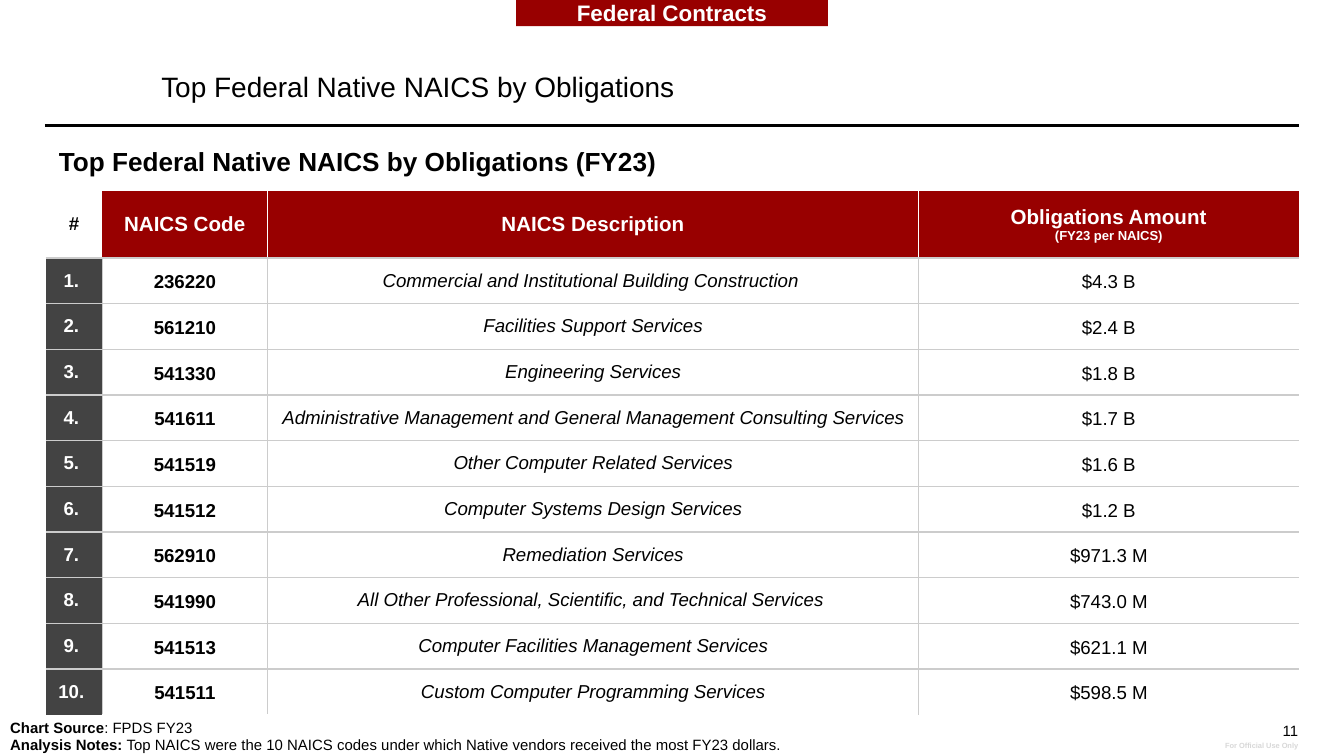
from dataclasses import dataclass, field
from lxml.etree import SubElement
from pptx import Presentation
from pptx.dml.color import RGBColor
from pptx.enum.shapes import MSO_CONNECTOR as Connector, MSO_SHAPE as Preset
from pptx.enum.text import MSO_ANCHOR as Anchor, MSO_AUTO_SIZE as AutoSize, PP_ALIGN as Align
from pptx.oxml.ns import qn
from pptx.util import Emu, Pt

EMU_PER_PX = 4572
FONT = "Arial"
RED, DARK, BLACK, WHITE, RULE, PALE = "980000", "434343", "000000", "FFFFFF", "CCCCCC", "D8D8D8"
PLAIN_TABLE_STYLE = "{2D5ABB26-0587-4C30-8999-92F81FD0307C}"

@dataclass(frozen=True)
class Run:
    text: str
    size: float
    color: str = BLACK
    bold: bool = False
    italic: bool = False

@dataclass(frozen=True)
class Look:
    align: Align = Align.LEFT
    anchor: Anchor = Anchor.TOP
    inset: tuple[int, int] = (0, 0)
    spacing: float = 1.0

@dataclass(frozen=True)
class Label:
    box: tuple[int, int, int, int]
    paragraphs: list[list[Run]]
    look: Look

@dataclass(frozen=True)
class Cell:
    paragraphs: list[list[Run]]
    look: Look
    fill: str | None = None
    borders: dict[str, str] = field(default_factory=dict)

@dataclass(frozen=True)
class Naics:
    code: str
    description: str
    amount: str

RANKING = [
    Naics("236220", "Commercial and Institutional Building Construction ", "$4.3 B"),
    Naics("561210", "Facilities Support Services", "$2.4 B"),
    Naics("541330", "Engineering Services", "$1.8 B"),
    Naics("541611", "Administrative Management and General Management Consulting Services", "$1.7 B"),
    Naics("541519", "Other Computer Related Services", "$1.6 B"),
    Naics("541512", "Computer Systems Design Services", "$1.2 B"),
    Naics("562910", "Remediation Services", "$971.3 M"),
    Naics("541990", "All Other Professional, Scientific, and Technical Services ", "$743.0 M"),
    Naics("541513", "Computer Facilities Management Services", "$621.1 M"),
    Naics("541511", "Custom Computer Programming Services", "$598.5 M"),
]
COLUMN_WIDTHS = [84, 246, 969, 566]
HEADER_HEIGHT, ROW_HEIGHT = 100, 68
HEADER_LOOK = Look(Align.CENTER, Anchor.MIDDLE, (20, 20))
TEXT_LOOK = Look(Align.CENTER, Anchor.MIDDLE)
VALUE_LOOK = Look(Align.CENTER, Anchor.MIDDLE, (6, 4), 1.15)
LABELS = [
    Label((1824, 1074, 108, 44), [[Run("11", 8)]], Look(Align.RIGHT)),
    Label((1790, 1086, 142, 30), [[Run("For Official Use Only", 4, PALE, bold=True)]],
          Look(Align.RIGHT, Anchor.BOTTOM)),
    Label((68, 196, 1280, 88), [[Run("Top Federal Native NAICS by Obligations (FY23)", 14, bold=True)]],
          Look(inset=(20, 20))),
    Label((0, 1025, 1854, 112), [
        [Run("Chart Source", 8, bold=True), Run(": FPDS FY23", 8)],
        [Run("Analysis Notes:", 8, bold=True),
         Run(" Top NAICS were the 10 NAICS codes under which Native vendors received the most FY23 dollars.", 8)],
    ], Look(anchor=Anchor.BOTTOM, inset=(15, 15))),
]

def px(length: int) -> Emu:
    return Emu(length * EMU_PER_PX)

def rgb(color: str) -> RGBColor:
    return RGBColor.from_string(color)

def set_values(target, values: dict) -> None:
    for key, value in values.items():
        setattr(target, key, value)

def margins(look: Look) -> dict:
    across, down = map(px, look.inset)
    return {"margin_left": across, "margin_right": across, "margin_top": down, "margin_bottom": down,
            "vertical_anchor": look.anchor}

def write(frame, paragraphs: list[list[Run]], look: Look) -> None:
    for index, runs in enumerate(paragraphs):
        paragraph = frame.add_paragraph() if index else frame.paragraphs[0]
        set_values(paragraph, {"alignment": look.align, "line_spacing": look.spacing, "space_before": Pt(0)})
        for part in runs:
            run = paragraph.add_run()
            run.text = part.text
            set_values(run.font, {"name": FONT, "size": Pt(part.size), "bold": part.bold, "italic": part.italic})
            run.font.color.rgb = rgb(part.color)

def write_in_shape(shape, paragraphs: list[list[Run]], look: Look) -> None:
    frame = shape.text_frame
    set_values(frame, {"word_wrap": True, "auto_size": AutoSize.NONE, **margins(look)})
    write(frame, paragraphs, look)

def draw_cell(target, cell: Cell) -> None:
    set_values(target, margins(cell.look))
    write(target.text_frame, cell.paragraphs, cell.look)
    properties = target._tc.get_or_add_tcPr()
    for side in filter(cell.borders.get, "LRTB"):
        edge = SubElement(properties, qn(f"a:ln{side}"), w=str(Pt(0.75)))
        SubElement(SubElement(edge, qn("a:solidFill")), qn("a:srgbClr"), val=cell.borders[side])
    if cell.fill:
        target.fill.solid()
        target.fill.fore_color.rgb = rgb(cell.fill)
    else:
        target.fill.background()

def sides(names: str, color: str = RULE) -> dict[str, str]:
    return dict.fromkeys(names, color)

def heading(text: str, white_sides: str, *notes: list[Run]) -> Cell:
    return Cell([[Run(text, 11, WHITE, bold=True)], *notes], HEADER_LOOK, RED,
                sides("B") | sides(white_sides, WHITE))

def header_cells() -> list[Cell]:
    return [
        Cell([[Run("#", 10, bold=True)]], HEADER_LOOK, borders=sides("B")),
        heading("NAICS Code", "R"),
        heading("NAICS Description", "LR"),
        heading("Obligations Amount", "L", [Run("(FY23 per NAICS)", 7, WHITE, bold=True)]),
    ]

def ranked_cells(rank: int, entry: Naics) -> list[Cell]:
    last = rank == len(RANKING)
    bottom = {} if last else sides("B")
    return [
        Cell([[Run(f"{rank}. ", 10, WHITE, bold=True)]], TEXT_LOOK, DARK, sides("TR") | bottom),
        Cell([[Run(entry.code, 10, bold=True)]], VALUE_LOOK,
             borders=sides("LTR") | sides("B", WHITE if last else RULE)),
        Cell([[Run(entry.description, 10, italic=True)]], TEXT_LOOK, borders=sides("LT") | bottom),
        Cell([[Run(entry.amount, 10)]], VALUE_LOOK, borders=sides("T") | bottom),
    ]

def draw_ranking(slide) -> None:
    rows = [header_cells()] + [ranked_cells(rank, entry) for rank, entry in enumerate(RANKING, 1)]
    heights = [HEADER_HEIGHT] + [ROW_HEIGHT] * len(RANKING)
    box = (68, 284, sum(COLUMN_WIDTHS), sum(heights))
    table = slide.shapes.add_table(len(rows), len(COLUMN_WIDTHS), *map(px, box)).table
    set_values(table, {"first_row": False, "horz_banding": False})
    table._tbl.tblPr.find(qn("a:tableStyleId")).text = PLAIN_TABLE_STYLE
    for column, width in zip(table.columns, COLUMN_WIDTHS):
        column.width = px(width)
    for row, height, cells in zip(table.rows, heights, rows):
        row.height = px(height)
        for target, cell in zip(row.cells, cells):
            draw_cell(target, cell)

def draw_heading(slide) -> None:
    divider = slide.shapes.add_connector(Connector.STRAIGHT, *map(px, (67, 187, 1933, 187)))
    set_values(divider.line, {"width": Pt(1.5)})
    divider.line.color.rgb = rgb(BLACK)
    SubElement(divider._element.spPr, qn("a:effectLst"))
    banner = slide.shapes.add_shape(Preset.RECTANGLE, *map(px, (768, -2, 464, 41)))
    banner.shadow.inherit = False
    banner.fill.solid()
    banner.fill.fore_color.rgb = rgb(RED)
    banner.line.fill.background()
    write_in_shape(banner, [[Run("Federal Contracts", 12, WHITE, bold=True)]], HEADER_LOOK)
    title = slide.shapes.title
    set_values(title, dict(zip(("left", "top", "width", "height"), map(px, (226, 39, 1708, 124)))))
    write_in_shape(title, [[Run("Top Federal Native NAICS by Obligations", 15)]],
                   Look(anchor=Anchor.BOTTOM, inset=(14, 8), spacing=0.9))

def main() -> None:
    deck = Presentation()
    set_values(deck, {"slide_width": px(2000), "slide_height": px(1125)})
    slide = deck.slides.add_slide(deck.slide_layouts[5])
    draw_heading(slide)
    draw_ranking(slide)
    for label in LABELS:
        write_in_shape(slide.shapes.add_textbox(*map(px, label.box)), label.paragraphs, label.look)
    deck.save("out.pptx")

if __name__ == "__main__":
    main()
